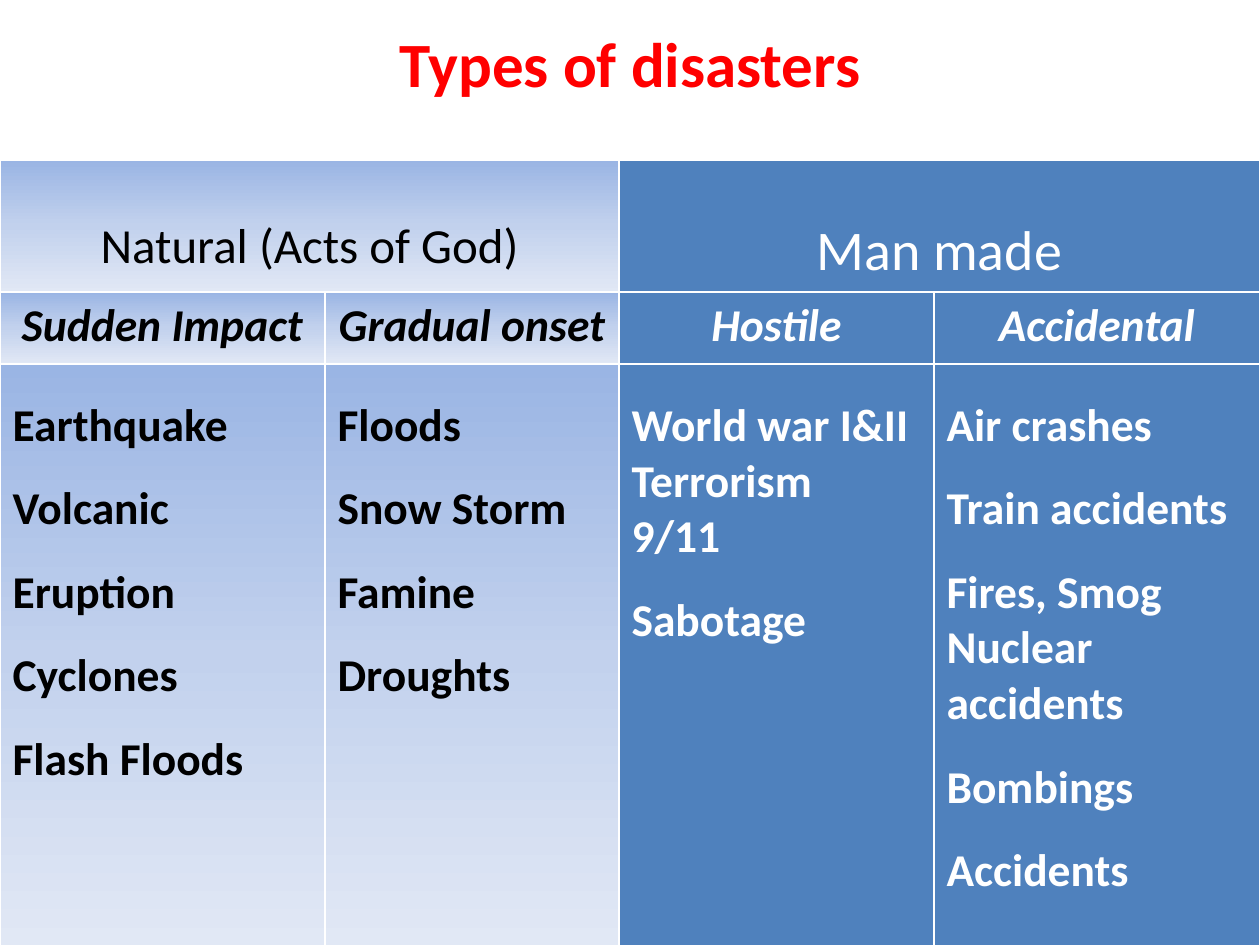
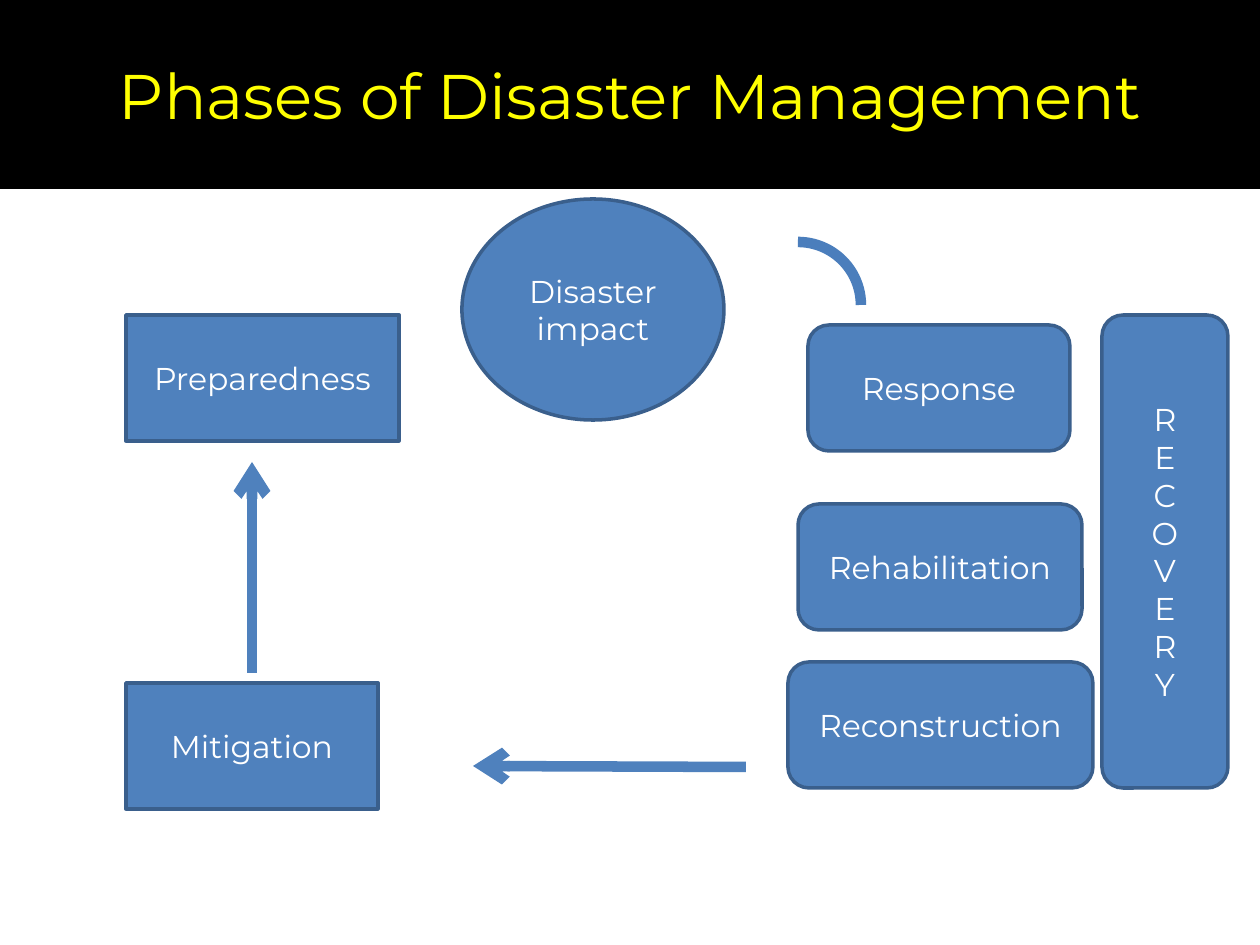
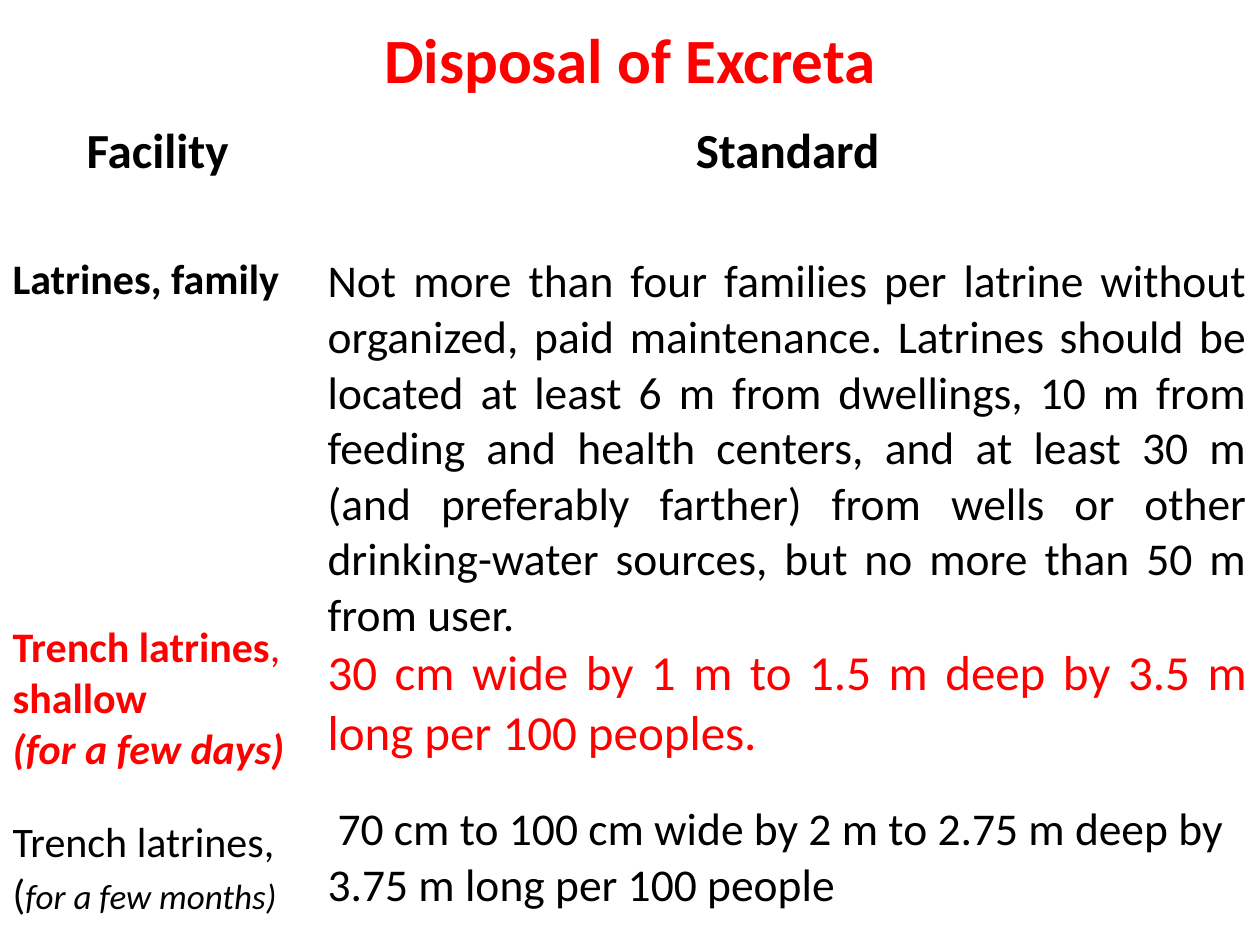
"""Builds three slides on disaster types, phases and sanitation."""
from pptx import Presentation
from pptx.dml.color import RGBColor
from pptx.enum.shapes import MSO_CONNECTOR as LINK, MSO_SHAPE as FORM
from pptx.enum.text import MSO_ANCHOR as ANCHOR, PP_ALIGN as ALIGN
from pptx.oxml import parse_xml
from pptx.oxml.ns import nsdecls
from pptx.util import Emu, Pt

SCALE = 914400 / 126
WIDE, HIGH = 1260, 945
RED, BLACK, WHITE, BLUE, EDGE = "FF0000", "000000", "FFFFFF", "4F81BD", "3A5F8C"
YELLOW, CURVE = "FFFF00", "4B7EBC"
FADE = ((0, "9AB5E4"), (50, "C2D1ED"), (100, "E1E8F5"))

HEAD = dict(size=36, name="Calibri", color=RED, bold=True)
TEXT = dict(size=26, name="Calibri", color=BLACK, bold=False, italic=False)
BOX = dict(size=18, name="Montserrat", color=WHITE)
MID, FULL = dict(alignment=ALIGN.CENTER), dict(alignment=ALIGN.JUSTIFY)
LOOSE, TIGHT = dict(line_spacing=1.5), dict(line_spacing=1.0)

TITLES = [
    ("Types of disasters", (0, 10, WIDE, 105), None, HEAD),
    ("Phases of Disaster Management", (0, 0, WIDE, 189), BLACK,
     dict(BOX, size=36, color=YELLOW)),
    ("Disposal of Excreta", (0, 0, WIDE, 116), WHITE, HEAD),
]

GROUPS = [("Natural (Acts of God)", 28), ("Man made", 32)]
KINDS = [
    ("Sudden Impact", ["Earthquake", "Volcanic Eruption", "Cyclones", "Flash Floods"]),
    ("Gradual onset", ["Floods", "Snow Storm", "Famine", "Droughts"]),
    ("Hostile", ["World war I&II",
                 ([("Terrorism", {}), ("\v", {}), ("9/11", {})], TIGHT),
                 "Sabotage"]),
    ("Accidental", ["Air crashes", "Train accidents", "Fires, Smog",
                    ([("Nuclear accidents", {})], TIGHT), "Bombings", "Accidents"]),
]

PHASES = [
    (FORM.RECTANGLE, (126, 683, 252, 126), ["Mitigation"]),
    (FORM.RECTANGLE, (126, 315, 273, 126), ["Preparedness"]),
    (FORM.OVAL, (462, 199, 262, 221), ["Disaster impact"]),
    (FORM.ROUNDED_RECTANGLE, (798, 504, 284, 126), ["Rehabilitation"]),
    (FORM.ROUNDED_RECTANGLE, (788, 662, 305, 126), ["Reconstruction"]),
    (FORM.ROUNDED_RECTANGLE, (808, 325, 262, 126), ["Response"]),
    (FORM.ROUNDED_RECTANGLE, (1102, 315, 126, 473), list("RECOVERY")),
]
ARROWS = [(746, 767, 473, 766), (252, 673, 252, 462)]
ARC = (735, 242, 126, 126)

WARN = dict(color=RED, bold=True)
PLACES = [
    ([("Latrines, family", dict(bold=True))], {}),
    ([("Trench latrines", WARN), (", ", dict(color=RED)), ("shallow", WARN)],
     dict(space_before=Pt(181))),
    ([("(for a few days)", dict(WARN, italic=True))], {}),
    ([("Trench latrines,", {})], dict(space_before=Pt(24))),
    ([("(", {}), ("for a few months)", dict(size=20, italic=True))], {}),
]
NORMS = [
    ([("Not more than four families per latrine without organized, paid "
       "maintenance. Latrines should be located at least 6 m from dwellings, "
       "10 m from feeding and health centers, and at least 30 m (and preferably "
       "farther) from wells or other drinking-water sources, but no more than "
       "50 m from user.", {})], FULL),
    ([("30 cm wide by 1 m to 1.5 m deep by 3.5 m long per 100 peoples.",
       dict(size=28, color=RED))], FULL),
    ([("70 cm to 100 cm wide by 2 m to 2.75 m deep by 3.75 m long per 100 people",
       {})], dict(space_before=Pt(22), indent=10)),
]


def px(*vals):
    return [Emu(round(v * SCALE)) for v in vals]


def tint(part, hue):
    part.solid()
    part.fore_color.rgb = RGBColor.from_string(hue)


def style(font, vals):
    for key, val in vals.items():
        if key == "color":
            font.color.rgb = RGBColor.from_string(val)
        else:
            setattr(font, key, Pt(val) if key == "size" else val)


def write(frame, paras, font, form):
    for num, para in enumerate(paras):
        runs, extra = ([(para, {})], {}) if isinstance(para, str) else para
        line = frame.paragraphs[0] if num == 0 else frame.add_paragraph()
        for key, val in {**form, **extra}.items():
            if key == "indent":
                line._p.get_or_add_pPr().set("indent", str(px(val)[0]))
            else:
                setattr(line, key, val)
        for text, diff in runs:
            if text == "\v":
                line.add_line_break()
                continue
            run = line.add_run()
            run.text = text
            style(run.font, {**font, **diff})


def start(deck, text, area, hue, font):
    slide = deck.slides.add_slide(deck.slide_layouts[5])
    title = slide.shapes.title
    title.left, title.top, title.width, title.height = px(*area)
    title.text_frame.vertical_anchor = ANCHOR.MIDDLE
    if hue:
        tint(title.fill, hue)
    write(title.text_frame, [text], font, MID)
    return slide


def grid(slide, top, cols, rows):
    area = px(0, top, sum(cols), sum(rows))
    table = slide.shapes.add_table(len(rows), len(cols), *area).table
    table.horz_banding = False
    for col, wide in zip(table.columns, px(*cols)):
        col.width = wide
    for row, high in zip(table.rows, px(*rows)):
        row.height = high
    return table


def fade(cell):
    stops = "".join(f'<a:gs pos="{pos * 1000}"><a:srgbClr val="{hue}"/></a:gs>'
                    for pos, hue in FADE)
    cell._tc.get_or_add_tcPr().append(parse_xml(
        f'<a:gradFill {nsdecls("a")} rotWithShape="1"><a:gsLst>{stops}</a:gsLst>'
        '<a:lin ang="5400000" scaled="0"/></a:gradFill>'))


def types(slide):
    table = grid(slide, 160, (325, 294, 315, 326), (131, 72, 582))
    for row in range(3):
        for col in range(4):
            cell = table.cell(row, col)
            if col < 2:
                fade(cell)
            else:
                tint(cell.fill, BLUE)
    for num, (text, size) in enumerate(GROUPS):
        cell = table.cell(0, num * 2)
        cell.merge(table.cell(0, num * 2 + 1))
        cell.margin_top = px(57)[0]
        hue = WHITE if num else BLACK
        write(cell.text_frame, [text], dict(TEXT, size=size, color=hue), MID)
    for col, (kind, cases) in enumerate(KINDS):
        font = dict(TEXT, bold=True, color=BLACK if col < 2 else WHITE)
        write(table.cell(1, col).text_frame, [kind], dict(font, italic=True), MID)
        write(table.cell(2, col).text_frame, cases, font, LOOSE)


def phases(slide):
    for kind, area, words in PHASES:
        box = slide.shapes.add_shape(kind, *px(*area))
        box.shadow.inherit = False
        tint(box.fill, BLUE)
        tint(box.line.fill, EDGE)
        box.line.width = Pt(2)
        write(box.text_frame, words, BOX, MID)
    for ends in ARROWS:
        arrow = slide.shapes.add_connector(LINK.STRAIGHT, *px(*ends))
        tint(arrow.line.fill, BLUE)
        arrow.line.width = Pt(6)
        prop = arrow._element.spPr
        prop.get_or_add_ln().append(
            parse_xml(f'<a:tailEnd {nsdecls("a")} type="arrow"/>'))
        prop.append(parse_xml(f'<a:effectLst {nsdecls("a")}/>'))
    arc = slide.shapes.add_shape(FORM.ARC, *px(*ARC))
    arc.shadow.inherit = False
    arc.fill.background()
    tint(arc.line.fill, CURVE)
    arc.line.width = Pt(6)


def waste(slide):
    table = grid(slide, 116, (315, 945), (132, 693))
    parts = [("Facility", PLACES, 24), ("Standard", NORMS, 26)]
    for col, (head, paras, size) in enumerate(parts):
        for row in range(2):
            tint(table.cell(row, col).fill, WHITE)
        write(table.cell(0, col).text_frame, [head], dict(TEXT, size=28, bold=True), MID)
        write(table.cell(1, col).text_frame, paras, dict(TEXT, size=size), {})


def main():
    deck = Presentation()
    deck.slide_width, deck.slide_height = px(WIDE, HIGH)
    for title, draw in zip(TITLES, (types, phases, waste)):
        draw(start(deck, *title))
    deck.save("out.pptx")


if __name__ == "__main__":
    main()
